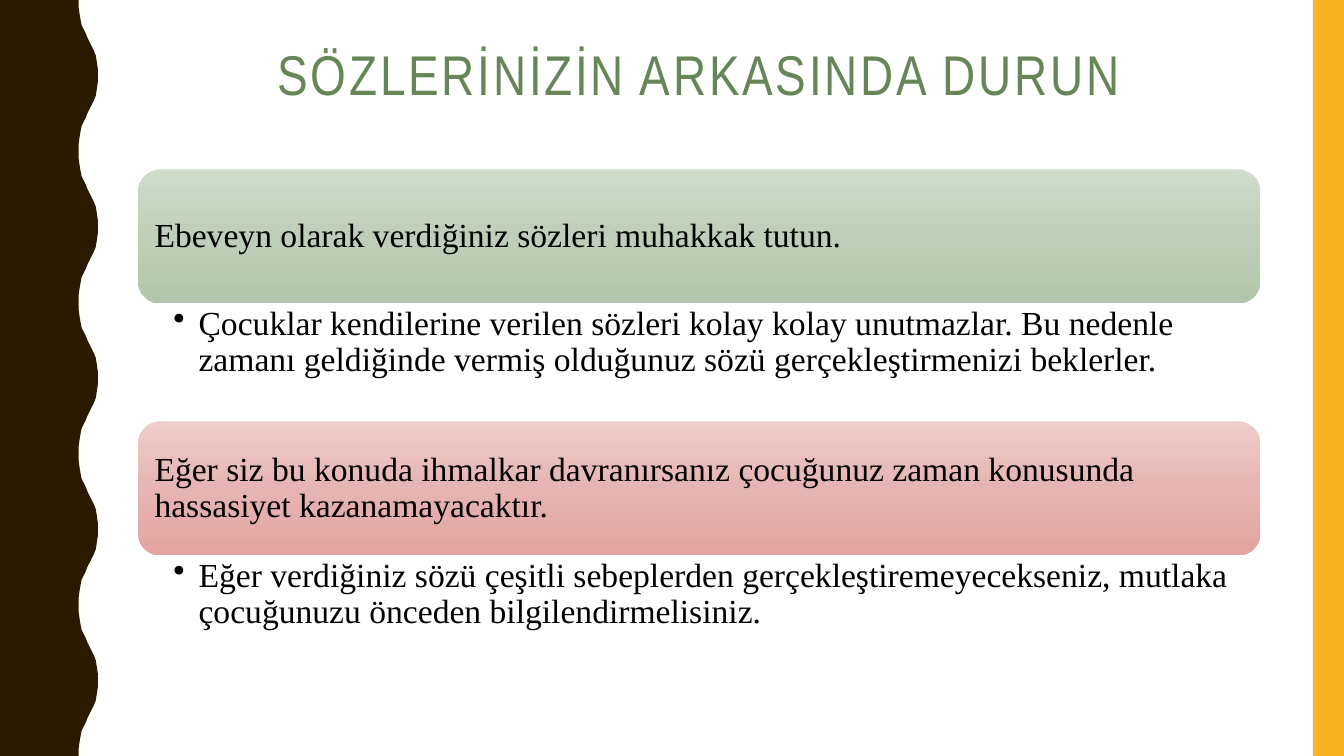
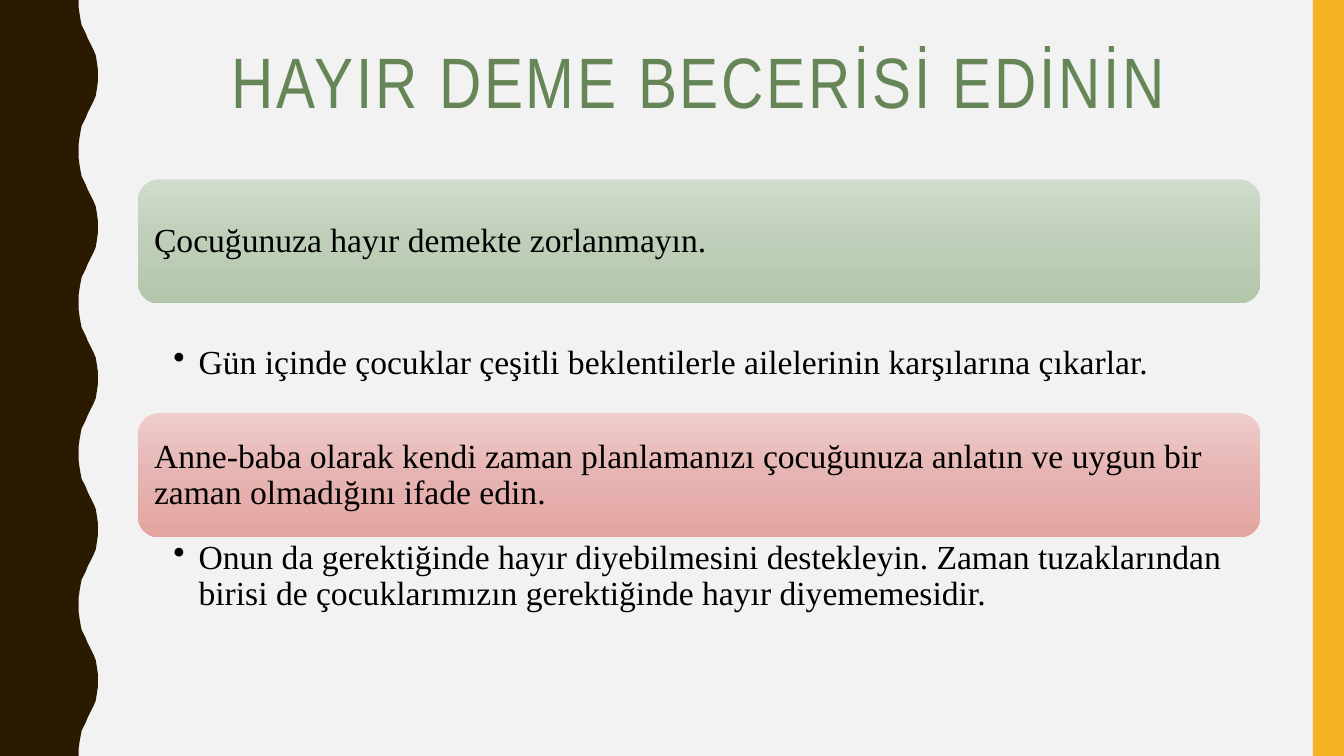
"""Build two slides of parenting advice with a shared wavy frame."""

from copy import deepcopy
from dataclasses import dataclass

from lxml import etree
from pptx import Presentation
from pptx import util as u
from pptx.dml.color import RGBColor
from pptx.enum import shapes, text
from pptx.oxml import ns

PX = 9144
WIDE, HIGH = 1333, 750
LEFT, SPAN = 137, 1113

BROWN = RGBColor(0x2A, 0x1A, 0x00)
GOLD = RGBColor(0xF8, 0xB3, 0x23)
GREEN = RGBColor(0x67, 0x86, 0x58)
BLACK = RGBColor(0x00, 0x00, 0x00)
WHITE = RGBColor(0xFF, 0xFF, 0xFF)
GRAY = RGBColor(0xF2, 0xF2, 0xF2)
SAGE = (RGBColor(0xD1, 0xDC, 0xCD), RGBColor(0xBF, 0xCE, 0xB8), RGBColor(0xB3, 0xC6, 0xAB))
ROSE = (RGBColor(0xEE, 0xCD, 0xCB), RGBColor(0xE6, 0xB4, 0xB2), RGBColor(0xE4, 0xA4, 0xA1))

HEAD, BODY = "Arial Narrow", "Times New Roman"
PERIOD = 150
CREST = [
    (78, 0), (78, 7), (79, 14), (80, 20), (81, 25), (83, 29), (85, 33), (87, 38),
    (89, 42), (91, 46), (93, 50), (95, 55), (96, 61), (97, 68), (97, 75),
]


@dataclass
class Point:
    card: str
    note: str
    tints: tuple[RGBColor, ...]
    drop: int = 0


@dataclass
class Page:
    title: str
    size: int
    back: RGBColor
    top: int
    card: int
    note: int
    points: list[Point]


PAGES = [
    Page("SÖZLERİNİZİN ARKASINDA DURUN", 40, WHITE, 168, 133, 117, [
        Point(
            "Ebeveyn olarak verdiğiniz sözleri muhakkak tutun.",
            "Çocuklar kendilerine verilen sözleri kolay kolay unutmazlar. Bu nedenle "
            "zamanı geldiğinde vermiş olduğunuz sözü gerçekleştirmenizi beklerler.",
            SAGE,
        ),
        Point(
            "Eğer siz bu konuda ihmalkar davranırsanız çocuğunuz zaman konusunda "
            "hassasiyet kazanamayacaktır.",
            "Eğer verdiğiniz sözü çeşitli sebeplerden gerçekleştiremeyecekseniz, mutlaka "
            "çocuğunuzu önceden bilgilendirmelisiniz.",
            ROSE,
        ),
    ]),
    Page("HAYIR DEME BECERİSİ EDİNİN", 51, GRAY, 178, 123, 109, [
        Point(
            "Çocuğunuza hayır demekte zorlanmayın.",
            "Gün içinde çocuklar çeşitli beklentilerle ailelerinin karşılarına çıkarlar.",
            SAGE,
            48,
        ),
        Point(
            "Anne-baba olarak kendi zaman planlamanızı çocuğunuza anlatın ve uygun bir "
            "zaman olmadığını ifade edin.",
            "Onun da gerektiğinde hayır diyebilmesini destekleyin. Zaman tuzaklarından "
            "birisi de çocuklarımızın gerektiğinde hayır diyememesidir.",
            ROSE,
        ),
    ]),
]


def box(*nums: int) -> list[u.Emu]:
    return [u.Emu(num * PX) for num in nums]


def paint(shape, color: RGBColor) -> None:
    shape.shadow.inherit = False
    shape.fill.solid()
    shape.fill.fore_color.rgb = color
    shape.line.fill.background()


def shade(shape, tints: tuple[RGBColor, ...]) -> None:
    shape.shadow.inherit = False
    shape.line.fill.background()
    shape.fill.gradient()
    shape.fill.gradient_angle = 270
    first = shape._element.spPr.find(".//" + ns.qn("a:gs"))
    first.addnext(deepcopy(first))
    for stop, tint, place in zip(shape.fill.gradient_stops, tints, (0, 0.5, 1)):
        stop.color.rgb = tint
        stop.position = place


def write(shape, words: str, size: int, face: str, color: RGBColor, pad: list[u.Emu]):
    frame = shape.text_frame
    frame.word_wrap = True
    frame.margin_left, frame.margin_top, frame.margin_right, frame.margin_bottom = pad
    para = frame.paragraphs[0]
    para.text = words
    para.line_spacing = 0.9
    para.alignment = text.PP_ALIGN.LEFT
    para.font.size = u.Pt(size)
    para.font.name = face
    para.font.color.rgb = color
    return para


def add_frame(slide) -> None:
    rise = CREST + [(x, PERIOD - y) for x, y in CREST[-2::-1]]
    wave = [(x, y + start) for start in range(0, HIGH, PERIOD) for x, y in rise]
    pen = slide.shapes.build_freeform(0, 0, scale=PX)
    pen.add_line_segments(wave + [(0, HIGH)], close=True)
    paint(pen.convert_to_shape(), BROWN)
    band = slide.shapes.add_shape(shapes.MSO_SHAPE.RECTANGLE, *box(1302, 0, 31, HIGH))
    paint(band, GOLD)


def add_title(slide, page: Page) -> None:
    area = slide.shapes.add_textbox(*box(LEFT, 42, SPAN, page.top - 60))
    para = write(area, page.title, page.size, HEAD, GREEN, box(10, 5, 10, 5))
    para.alignment = text.PP_ALIGN.CENTER
    para._p.get_or_add_pPr().get_or_add_defRPr().set("spc", "200")


def add_card(slide, point: Point, top: int, high: int) -> None:
    card = slide.shapes.add_shape(
        shapes.MSO_SHAPE.ROUNDED_RECTANGLE, *box(LEFT, top, SPAN, high))
    shade(card, point.tints)
    write(card, point.card, 24, BODY, BLACK, box(10, 10, 10, 10))
    card.text_frame.vertical_anchor = text.MSO_ANCHOR.MIDDLE


def add_note(slide, point: Point, top: int, high: int) -> None:
    note = slide.shapes.add_textbox(*box(LEFT, top, SPAN, high))
    para = write(note, point.note, 24, BODY, BLACK, box(35, 3 + point.drop, 19, 3))
    props = para._p.get_or_add_pPr()
    props.set("marL", str(25 * PX))
    props.set("indent", str(-25 * PX))
    mark = etree.Element(ns.qn("a:buChar"), char="•")
    props.get_or_add_defRPr().addprevious(mark)


def add_page(deck, page: Page) -> None:
    slide = deck.slides.add_slide(deck.slide_layouts[6])
    slide.background.fill.solid()
    slide.background.fill.fore_color.rgb = page.back
    add_frame(slide)
    add_title(slide, page)
    for row, point in enumerate(page.points):
        top = page.top + row * (page.card + page.note)
        add_card(slide, point, top, page.card)
        add_note(slide, point, top + page.card, page.note)


def main() -> None:
    deck = Presentation()
    deck.slide_width, deck.slide_height = box(WIDE, HIGH)
    for page in PAGES:
        add_page(deck, page)
    deck.save("out.pptx")


if __name__ == "__main__":
    main()
